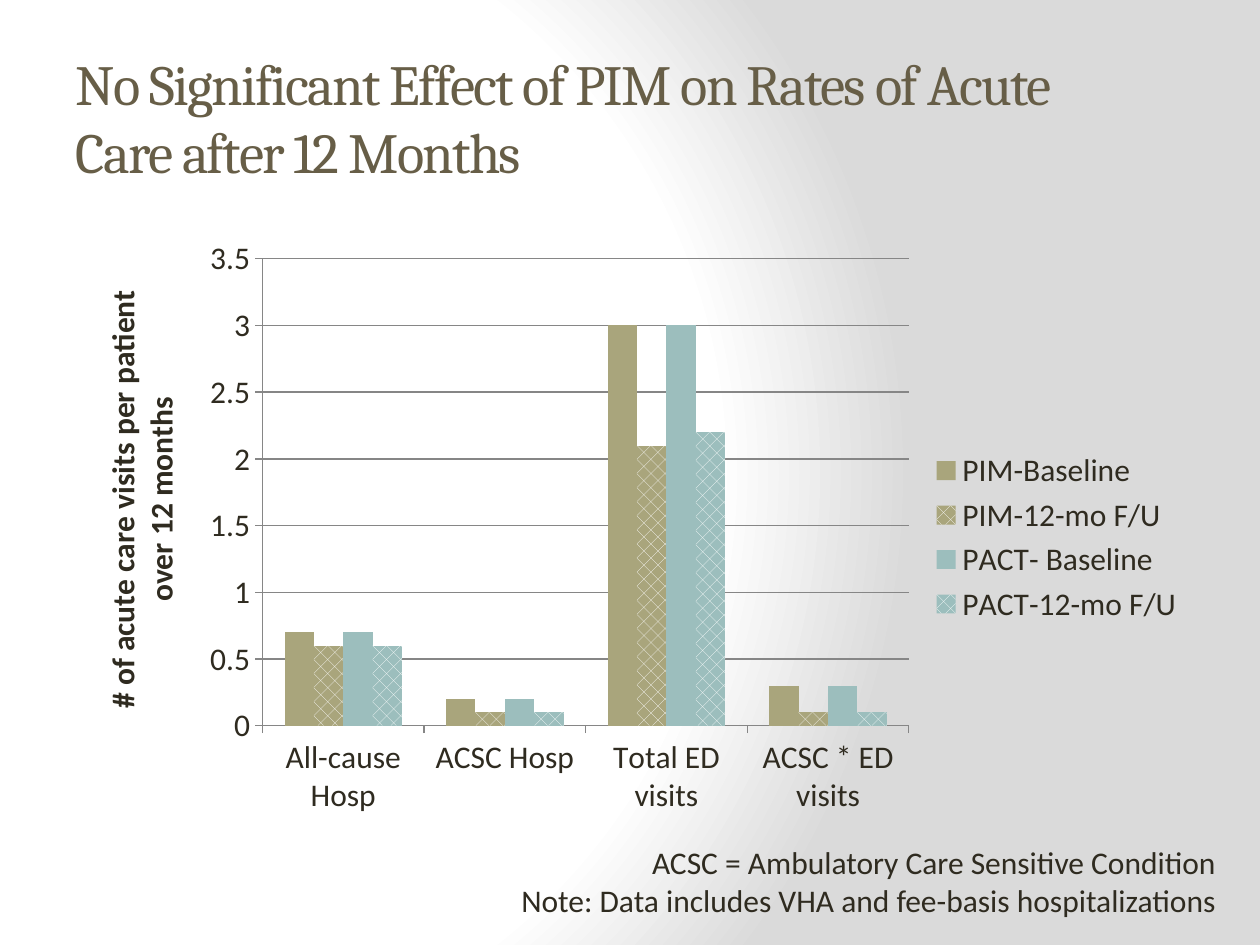
from pptx import Presentation
from pptx.chart.data import CategoryChartData
from pptx.dml.color import RGBColor
from pptx.enum.chart import XL_CHART_TYPE, XL_LEGEND_POSITION, XL_TICK_MARK
from pptx.enum.dml import MSO_PATTERN
from pptx.enum.text import MSO_ANCHOR, MSO_AUTO_SIZE, PP_ALIGN
from pptx.oxml import parse_xml
from pptx.oxml.ns import nsdecls, qn
from pptx.util import Inches, Pt

WHITE = RGBColor(0xFF, 0xFF, 0xFF)
GRAY = RGBColor(0xDA, 0xDA, 0xDA)
LINE = RGBColor(0x86, 0x86, 0x86)
INK = RGBColor(0x2F, 0x2B, 0x20)
BROWN = RGBColor(0x67, 0x5E, 0x47)
OLIVE = RGBColor(0xA9, 0xA5, 0x7C)
TEAL = RGBColor(0x9C, 0xBE, 0xBD)

CATEGORIES = ["All-cause Hosp", "ACSC Hosp", "Total ED visits", "ACSC * ED visits"]
SERIES = [
    ("PIM-Baseline", (0.7, 0.2, 3.0, 0.3), OLIVE, False),
    ("PIM-12-mo F/U", (0.6, 0.1, 2.1, 0.1), OLIVE, True),
    ("PACT- Baseline", (0.7, 0.2, 3.0, 0.3), TEAL, False),
    ("PACT-12-mo F/U", (0.6, 0.1, 2.2, 0.1), TEAL, True),
]


class SlideBuilder:
    heading_font = "Cambria"
    body_font = "Calibri"
    body_size = Pt(18)

    def __init__(self, presentation):
        self.slide = presentation.slides.add_slide(presentation.slide_layouts[5])

    def style(self, font):
        font.name = self.body_font
        font.size = self.body_size
        font.color.rgb = INK

    def background(self):
        self.slide.background.fill.gradient()
        gradient = self.slide.element.find(".//" + qn("a:gradFill"))
        stops = "".join(
            f'<a:gs pos="{position}"><a:srgbClr val="{color}"/></a:gs>'
            for position, color in ((0, WHITE), (75000, WHITE), (100000, GRAY))
        )
        gradient.getparent().replace(gradient, parse_xml(
            f'<a:gradFill {nsdecls("a")} rotWithShape="1"><a:gsLst>{stops}</a:gsLst>'
            '<a:path path="circle"><a:fillToRect l="20000" t="50000" r="100000" b="50000"/>'
            "</a:path></a:gradFill>"
        ))

    def title(self, text, left, top, width, height):
        shape = self.slide.shapes.title
        shape.left, shape.top = Inches(left), Inches(top)
        shape.width, shape.height = Inches(width), Inches(height)
        frame = shape.text_frame
        frame.text = text
        frame.word_wrap = True
        frame.auto_size = MSO_AUTO_SIZE.NONE
        frame.vertical_anchor = MSO_ANCHOR.MIDDLE
        paragraph = frame.paragraphs[0]
        paragraph.alignment = PP_ALIGN.LEFT
        paragraph.font.name = self.heading_font
        paragraph.font.size = Pt(32.4)
        paragraph.font.color.rgb = BROWN
        paragraph.runs[0].font._element.set("spc", "-100")

    def note(self, lines, left, top, width, height):
        shape = self.slide.shapes.add_textbox(
            Inches(left), Inches(top), Inches(width), Inches(height))
        frame = shape.text_frame
        frame.text = "\n".join(lines)
        frame.word_wrap = True
        frame.auto_size = MSO_AUTO_SIZE.SHAPE_TO_FIT_TEXT
        for paragraph in frame.paragraphs:
            paragraph.alignment = PP_ALIGN.RIGHT
            self.style(paragraph.font)

    def column_chart(self, axis_title, left, top, width, height):
        data = CategoryChartData()
        data.categories = CATEGORIES
        for name, values, _, _ in SERIES:
            data.add_series(name, values)
        chart = self.slide.shapes.add_chart(
            XL_CHART_TYPE.COLUMN_CLUSTERED,
            Inches(left), Inches(top), Inches(width), Inches(height), data).chart
        self.style(chart.font)
        chart.has_title = False
        chart.has_legend = True
        chart.legend.position = XL_LEGEND_POSITION.RIGHT
        chart.legend.include_in_layout = False

        plot = chart.plots[0]
        plot.gap_width = 150
        plot.overlap = 0
        plot.vary_by_categories = False
        for series, (_, _, color, patterned) in zip(plot.series, SERIES):
            self.fill_series(series.format.fill, color, patterned)

        value_axis = chart.value_axis
        value_axis.minimum_scale, value_axis.maximum_scale = 0, 3.5
        value_axis.major_unit = 0.5
        value_axis.has_major_gridlines = True
        title_frame = value_axis.axis_title.text_frame
        title_frame.text = axis_title
        title_font = title_frame.paragraphs[0].font
        self.style(title_font)
        title_font.bold = True
        for axis in (chart.category_axis, value_axis):
            axis.major_tick_mark = XL_TICK_MARK.OUTSIDE
            axis.minor_tick_mark = XL_TICK_MARK.NONE
        for lines in (chart.category_axis, value_axis, value_axis.major_gridlines):
            lines.format.line.color.rgb = LINE
            lines.format.line.width = Pt(0.75)

        plot_area = chart.element.find(".//" + qn("c:plotArea"))
        self.place(plot_area, 0, '<c:layoutTarget val="inner"/>',
                   x=0.176, y=0.046, w=0.57, h=0.761)
        title_element = plot_area.find(f'{qn("c:valAx")}/{qn("c:title")}')
        self.place(title_element, 1, "", x=0.028, y=0.088)

    def fill_series(self, fill, color, patterned):
        if patterned:
            fill.patterned()
            fill.pattern = MSO_PATTERN.PERCENT_25
            fill.fore_color.rgb = WHITE
            fill.back_color.rgb = color
        else:
            fill.solid()
            fill.fore_color.rgb = color

    def place(self, element, index, target, **box):
        for layout in element.findall(qn("c:layout")):
            element.remove(layout)
        modes = "".join(f'<c:{key}Mode val="edge"/>' for key in "xy")
        sizes = "".join(f'<c:{key} val="{value}"/>' for key, value in box.items())
        element.insert(index, parse_xml(
            f'<c:layout {nsdecls("c")}><c:manualLayout>'
            f"{target}{modes}{sizes}</c:manualLayout></c:layout>"
        ))


def main():
    presentation = Presentation()
    presentation.slide_width, presentation.slide_height = Inches(10), Inches(7.5)
    builder = SlideBuilder(presentation)
    builder.background()
    builder.title("No Significant Effect of PIM on Rates of Acute Care after 12 Months",
                  0.5, 0.3, 8.33, 1.25)
    builder.column_chart("# of acute care visits per patient over 12 months",
                         0.5, 1.83, 9, 4.87)
    builder.note(["ACSC = Ambulatory Care Sensitive Condition",
                  "Note: Data includes VHA and fee-basis hospitalizations"],
                 3.82, 6.64, 5.93, 0.71)
    presentation.save("out.pptx")


if __name__ == "__main__":
    main()
